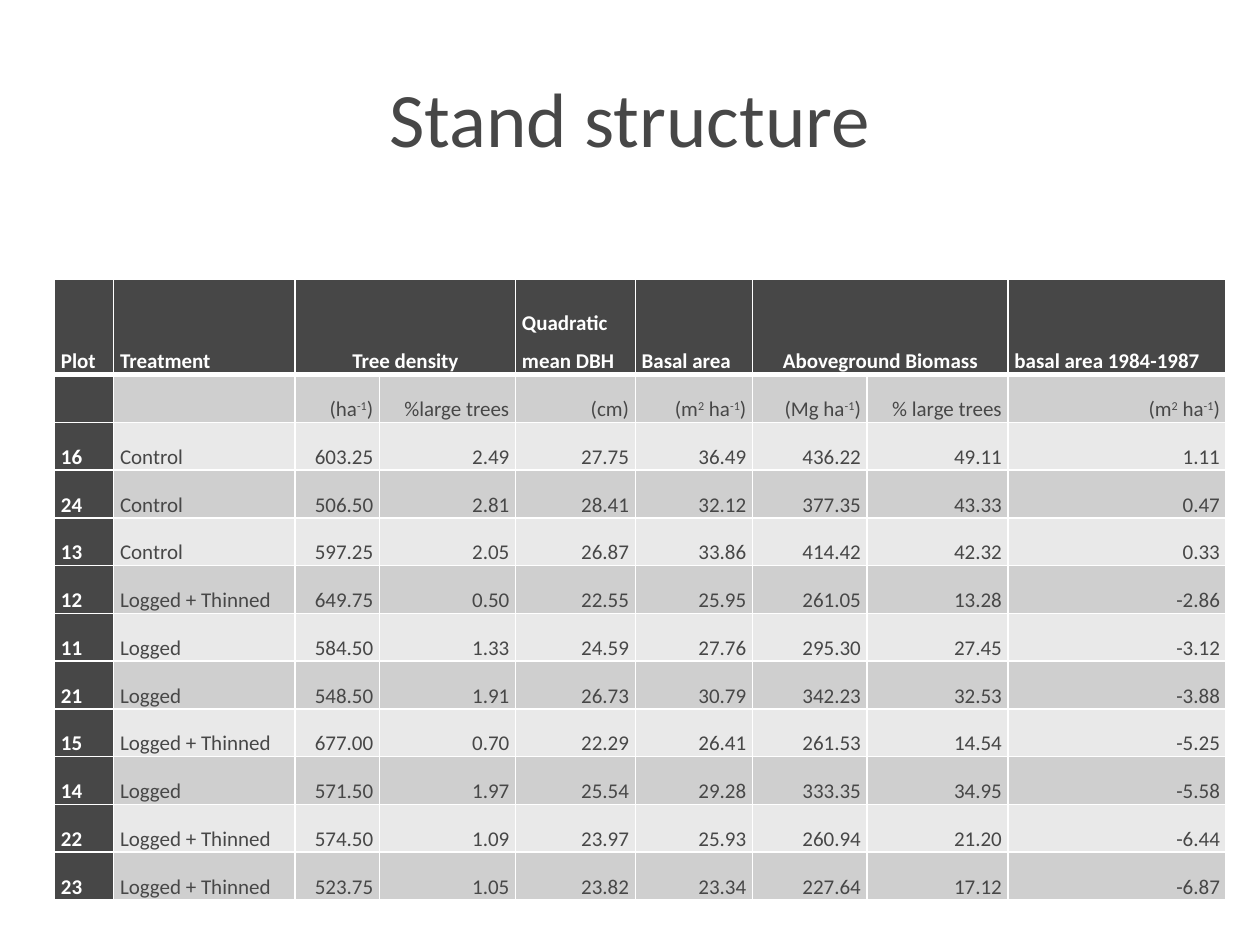
import dataclasses

import lxml.etree
import pptx
import pptx.dml.color
import pptx.enum.text
import pptx.oxml.ns
import pptx.table
import pptx.text.text
import pptx.util

Pt = pptx.util.Pt
Align = pptx.enum.text.PP_ALIGN
Anchor = pptx.enum.text.MSO_ANCHOR

DARK, WHITE = "474747", "FFFFFF"
BANDS = ("CFCFCF", "E9E9E9")
FONT = "Calibri"
HEADER_HEIGHT, ROW_HEIGHT = 54.7, 27.3


@dataclasses.dataclass(frozen=True)
class Column:
    heading: str
    unit: str  # text between carets is superscript
    width: float
    heading_span: int = 1


@dataclasses.dataclass(frozen=True)
class CellLook:
    fill: str
    color: str
    bold: bool
    align: Align
    bottom_line: float = 1


COLUMNS = (
    Column("Plot", "", 33.8),
    Column("Treatment", "", 103.7),
    Column("Tree density", "(ha^-1^)", 48.2, heading_span=2),
    Column("", "%large trees", 77.8),
    Column("Quadratic\nmean DBH", "(cm)", 68.4),
    Column("Basal area", "(m^2^ ha^-1^)", 67),
    Column("Aboveground Biomass", "(Mg ha^-1^)", 65.5, heading_span=2),
    Column("", "% large trees", 80.6),
    Column("basal area 1984-1987", "(m^2^ ha^-1^)", 124.6),
)
PLOTS = (
    ("16", "Control", "603.25", "2.49", "27.75", "36.49", "436.22", "49.11", "1.11"),
    ("24", "Control", "506.50", "2.81", "28.41", "32.12", "377.35", "43.33", "0.47"),
    ("13", "Control", "597.25", "2.05", "26.87", "33.86", "414.42", "42.32", "0.33"),
    ("12", "Logged + Thinned", "649.75", "0.50", "22.55", "25.95", "261.05", "13.28", "-2.86"),
    ("11", "Logged", "584.50", "1.33", "24.59", "27.76", "295.30", "27.45", "-3.12"),
    ("21", "Logged", "548.50", "1.91", "26.73", "30.79", "342.23", "32.53", "-3.88"),
    ("15", "Logged + Thinned", "677.00", "0.70", "22.29", "26.41", "261.53", "14.54", "-5.25"),
    ("14", "Logged", "571.50", "1.97", "25.54", "29.28", "333.35", "34.95", "-5.58"),
    ("22", "Logged + Thinned", "574.50", "1.09", "23.97", "25.93", "260.94", "21.20", "-6.44"),
    ("23", "Logged + Thinned", "523.75", "1.05", "23.82", "23.34", "227.64", "17.12", "-6.87"),
)


def rgb(color: str) -> pptx.dml.color.RGBColor:
    return pptx.dml.color.RGBColor.from_string(color)


def set_font(paragraph: pptx.text.text._Paragraph, size: float, color: str, bold: bool) -> None:
    font = paragraph.font
    font.name, font.size, font.bold = FONT, Pt(size), bold
    font.color.rgb = rgb(color)


def add_borders(cell: pptx.table._Cell, bottom_line: float) -> None:
    """Draw white cell borders; must run before the cell gets its fill."""
    qn = pptx.oxml.ns.qn
    properties = cell._tc.get_or_add_tcPr()
    for side, width in (("L", 1), ("R", 1), ("T", 1), ("B", bottom_line)):
        line = lxml.etree.SubElement(properties, qn(f"a:ln{side}"), w=str(Pt(width)))
        fill = lxml.etree.SubElement(line, qn("a:solidFill"))
        lxml.etree.SubElement(fill, qn("a:srgbClr"), val=WHITE)


def fill_cell(cell: pptx.table._Cell, text: str, look: CellLook) -> None:
    add_borders(cell, look.bottom_line)
    cell.fill.solid()
    cell.fill.fore_color.rgb = rgb(look.fill)
    cell.vertical_anchor = Anchor.BOTTOM
    cell.margin_left = cell.margin_right = Pt(3.6)
    cell.margin_top = cell.margin_bottom = 0
    for number, line in enumerate(text.split("\n")):
        paragraph = cell.text_frame.add_paragraph() if number else cell.text_frame.paragraphs[0]
        paragraph.alignment = look.align
        set_font(paragraph, 12, look.color, look.bold)
        if not line:
            continue
        paragraph.line_spacing = 1.5
        for part_number, part in enumerate(line.split("^")):
            if part:
                run = paragraph.add_run()
                run.text = part
                if part_number % 2:
                    run._r.get_or_add_rPr().set("baseline", "30000")


def fill_headings(table: pptx.table.Table) -> None:
    for index, column in enumerate(COLUMNS):
        table.columns[index].width = Pt(column.width)
        cell = table.cell(0, index)
        spans = column.heading_span > 1
        align = Align.CENTER if spans else Align.LEFT
        fill_cell(cell, column.heading, CellLook(DARK, WHITE, True, align, bottom_line=3))
        if spans:
            cell.merge(table.cell(0, index + column.heading_span - 1))


def fill_body(table: pptx.table.Table) -> None:
    units = tuple(column.unit for column in COLUMNS)
    for row, values in enumerate((units, *PLOTS), start=1):
        band = BANDS[(row - 1) % 2]
        looks = (
            CellLook(DARK, WHITE, True, Align.LEFT),
            CellLook(band, DARK, False, Align.LEFT),
            CellLook(band, DARK, False, Align.RIGHT),
        )
        for index, value in enumerate(values):
            fill_cell(table.cell(row, index), value, looks[min(index, 2)])


def main() -> None:
    deck = pptx.Presentation()
    deck.slide_width, deck.slide_height = Pt(720), Pt(540)
    slide = deck.slides.add_slide(deck.slide_layouts[5])

    title = slide.shapes.title
    title.left, title.top, title.width, title.height = Pt(36), Pt(21.6), Pt(648), Pt(90)
    title.text_frame.text = "Stand structure"
    title.text_frame.vertical_anchor = Anchor.MIDDLE
    heading = title.text_frame.paragraphs[0]
    heading.alignment = Align.CENTER
    set_font(heading, 44, DARK, False)

    row_count = len(PLOTS) + 2
    stand_table = slide.shapes.add_table(
        row_count, len(COLUMNS), Pt(31.2), Pt(159.3),
        Pt(sum(column.width for column in COLUMNS)),
        Pt(HEADER_HEIGHT + ROW_HEIGHT * (row_count - 1)),
    ).table
    stand_table.first_col = True
    for index, row in enumerate(stand_table.rows):
        row.height = Pt(ROW_HEIGHT if index else HEADER_HEIGHT)
    fill_headings(stand_table)
    fill_body(stand_table)

    deck.save("out.pptx")


if __name__ == "__main__":
    main()
